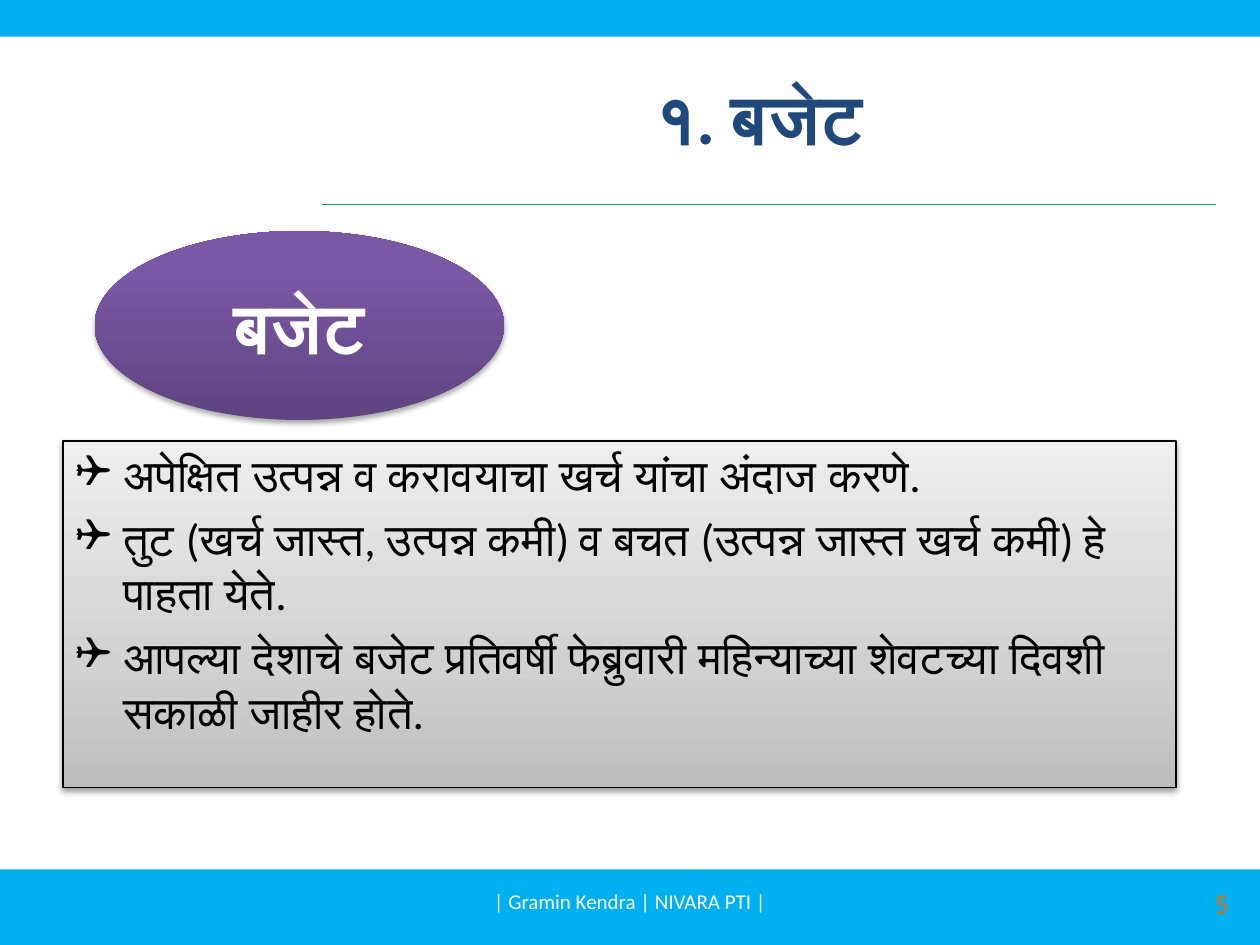
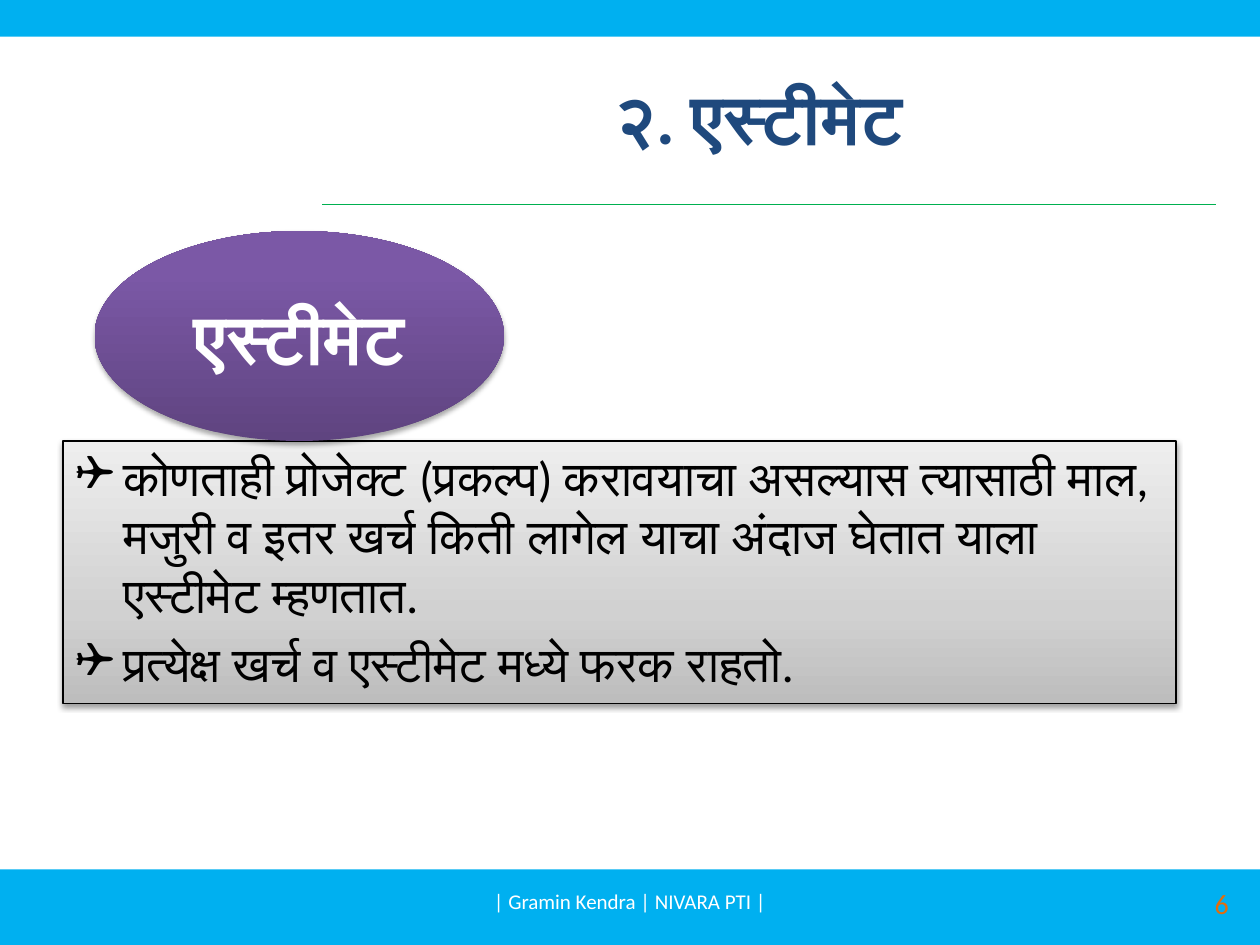
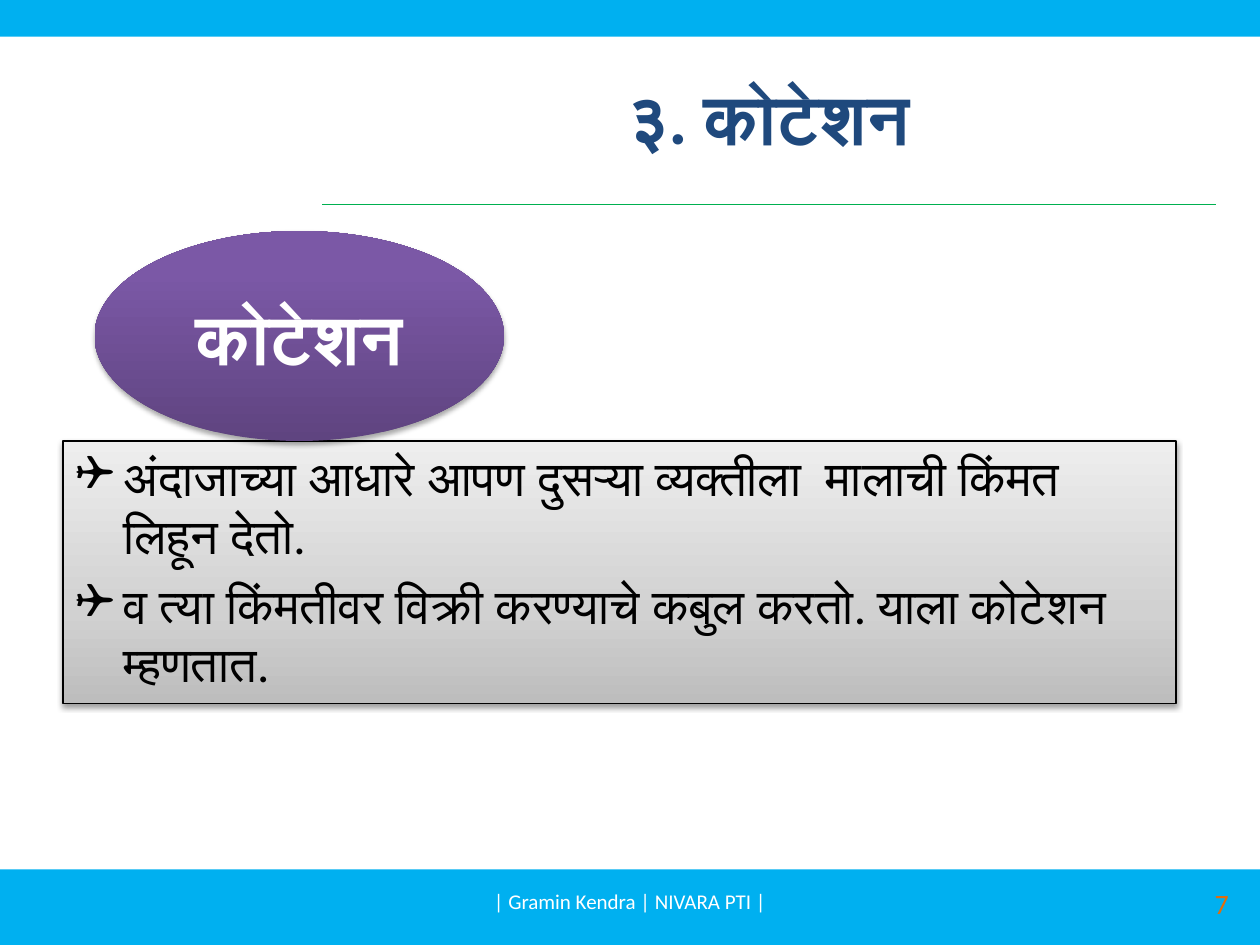
from lxml.etree import SubElement
from pptx import Presentation
from pptx.dml.color import RGBColor
from pptx.enum.shapes import MSO_CONNECTOR, MSO_SHAPE
from pptx.enum.text import MSO_ANCHOR, PP_ALIGN
from pptx.oxml.ns import qn
from pptx.util import Inches, Pt

FONT = "Calibri"
COLORS = {
    "band": "00B0F0", "rule": "00B050", "title": "1F497D", "white": "FFFFFF",
    "black": "000000", "number": "E46C0A",
}
# Gradient stops run from the bottom edge to the top
PANEL_STOPS = [(0, "BDBDBD"), (35, "D1D1D1"), (100, "EEEEEE")]
OVAL_STOPS = [(0, "5F4480"), (80, "7B58A6"), (100, "7C57A8")]

# The grid has 120 columns and 90 rows of square cells
COLS, ROWS = 120, 90
CELL = Inches(10) / COLS
TITLE_BOX = (30.7, 3.6, 85.1, 15)
RULE_ROW = 19.45
TOP_BAND = (0, 0, COLS, 3.5)
FOOTER = (0, 82.8, COLS, 7.2)
OVAL_LEFT, OVAL_TOP, OVAL_WIDTH = 9, 22, 39
PANEL_LEFT, PANEL_TOP, PANEL_WIDTH = 6, 42, 106

SLIDES = [
    dict(number=5, title="१. बजेट ", term="बजेट", oval_rows=18, panel_rows=33, size=25.9,
         points=["अपेक्षित उत्पन्न व करावयाचा खर्च यांचा अंदाज करणे.",
                 "तुट (खर्च जास्त, उत्पन्न कमी) व बचत (उत्पन्न जास्त खर्च कमी) हे पाहता येते.",
                 "आपल्या देशाचे बजेट प्रतिवर्षी फेब्रुवारी महिन्याच्या शेवटच्या दिवशी "
                 "सकाळी जाहीर होते."]),
    dict(number=6, title="२. एस्टीमेट ", term="एस्टीमेट", oval_rows=20, panel_rows=25, size=28,
         points=["कोणताही प्रोजेक्ट (प्रकल्प) करावयाचा असल्यास त्यासाठी माल, मजुरी व "
                 "इतर खर्च किती लागेल याचा अंदाज घेतात याला एस्टीमेट म्हणतात.",
                 "प्रत्येक्ष खर्च व एस्टीमेट मध्ये फरक राहतो."]),
    dict(number=7, title="३. कोटेशन", term="कोटेशन", oval_rows=20, panel_rows=25, size=28,
         points=["अंदाजाच्या आधारे आपण दुसऱ्या व्यक्तीला  मालाची किंमत लिहून देतो.",
                 "व त्या किंमतीवर विक्री करण्याचे कबुल करतो. याला कोटेशन म्हणतात."]),
]


def rgb(name):
    return RGBColor.from_string(COLORS[name])


def emu(*cells):
    return [round(c * CELL) for c in cells]


def add_text(tf, lines, size, color, bold=False, align=PP_ALIGN.CENTER,
             anchor=MSO_ANCHOR.MIDDLE, bullet=None):
    """Fill a text frame, one paragraph per line; return the last run."""
    tf.word_wrap = True
    tf.vertical_anchor = anchor
    for i, line in enumerate(lines):
        p = tf.paragraphs[0] if i == 0 else tf.add_paragraph()
        p.alignment = align
        if i:
            p.space_before = Pt(round(size * 0.21, 1))
        if bullet:
            pPr = p._p.get_or_add_pPr()
            pPr.set("marL", str(Inches(0.38)))
            pPr.set("indent", str(-Inches(0.38)))
            SubElement(pPr, qn("a:buFont"), typeface="Wingdings")
            SubElement(pPr, qn("a:buChar"), char=bullet)
        r = p.add_run()
        r.text = line
        r.font.name, r.font.size, r.font.bold = FONT, Pt(size), bold
        r.font.color.rgb = rgb(color)
    return r


def add_block(s, kind, box):
    sp = s.shapes.add_shape(kind, *emu(*box))
    sp.shadow.inherit = False
    sp.line.fill.background()
    return sp


def add_color(parent, value):
    return SubElement(parent, qn("a:srgbClr"), val=value)


def shade(sp, stops, opacity, distance):
    """Give a shape a bottom-to-top gradient and a soft shadow below it."""
    sp.fill.gradient()
    grad = sp._element.spPr.find(qn("a:gradFill"))
    for child in list(grad):
        grad.remove(child)
    gs_list = SubElement(grad, qn("a:gsLst"))
    for pos, value in stops:
        add_color(SubElement(gs_list, qn("a:gs"), pos=str(pos * 1000)), value)
    SubElement(grad, qn("a:lin"), ang="16200000", scaled="0")
    effects = sp._element.spPr.find(qn("a:effectLst"))
    shadow = SubElement(effects, qn("a:outerShdw"), blurRad=str(Pt(3.1)),
                        dist=str(Pt(distance)), dir="5400000", rotWithShape="0")
    SubElement(add_color(shadow, COLORS["black"]), qn("a:alpha"), val=str(opacity * 1000))


def add_band(s, box):
    sp = add_block(s, MSO_SHAPE.RECTANGLE, box)
    sp.fill.solid()
    sp.fill.fore_color.rgb = rgb("band")


def add_header(s, title, box):
    left, top, width, height = box
    add_band(s, TOP_BAND)
    # Rule under the title
    line = s.shapes.add_connector(MSO_CONNECTOR.STRAIGHT,
                                  *emu(left, RULE_ROW, left + width, RULE_ROW))
    line.line.color.rgb = rgb("rule")
    line.line.width = Pt(0.75)
    SubElement(line._element.spPr, qn("a:effectLst"))
    # Title
    sp = s.shapes.title
    sp.left, sp.top, sp.width, sp.height = emu(left, top, width, height)
    add_text(sp.text_frame, [title], 40, "title", bold=True)


def add_footer(s, number, box):
    left, top, width, height = box
    add_band(s, box)
    # Centred credit
    credit = s.shapes.add_textbox(*emu(left + 41, top + 0.6, 38, 4.8))
    add_text(credit.text_frame, ["| Gramin Kendra | NIVARA PTI |"], 12, "white")
    # Slide number field with outlined digits
    page = s.shapes.add_textbox(*emu(left + width - 29.8, top + 0.8, 28, 4.8))
    r = add_text(page.text_frame, [str(number)], 16, "number", align=PP_ALIGN.RIGHT)
    rPr = r._r.get_or_add_rPr()
    outline = SubElement(rPr, qn("a:ln"), w=str(Pt(1.45)))
    add_color(SubElement(outline, qn("a:solidFill")), COLORS["white"])
    rPr.insert(0, outline)
    field = r._r
    field.tag = qn("a:fld")
    field.set("id", "{B6F15528-21DE-4FAA-801E-634DDDAF4B2B}")
    field.set("type", "slidenum")


def add_panel(s, points, size, box):
    sp = add_block(s, MSO_SHAPE.RECTANGLE, box)
    shade(sp, PANEL_STOPS, opacity=38, distance=1.6)
    sp.line.color.rgb = rgb("black")
    sp.line.width = Pt(0.75)
    add_text(sp.text_frame, points, size, "black", align=PP_ALIGN.LEFT,
             anchor=MSO_ANCHOR.TOP, bullet="❑")


def add_term(s, term, box):
    sp = add_block(s, MSO_SHAPE.OVAL, box)
    shade(sp, OVAL_STOPS, opacity=35, distance=1.8)
    add_text(sp.text_frame, [term], 40, "white", bold=True)


def add_term_slide(prs, number, title, term, oval_rows, panel_rows, size, points):
    s = prs.slides.add_slide(prs.slide_layouts[5])
    add_header(s, title, TITLE_BOX)
    add_panel(s, points, size, (PANEL_LEFT, PANEL_TOP, PANEL_WIDTH, panel_rows))
    add_footer(s, number, FOOTER)
    add_term(s, term, (OVAL_LEFT, OVAL_TOP, OVAL_WIDTH, oval_rows))


def main():
    prs = Presentation()
    prs.slide_width, prs.slide_height = emu(COLS, ROWS)
    # Numbering continues from the first slide's number
    prs.element.set("firstSlideNum", str(SLIDES[0]["number"]))
    for content in SLIDES:
        add_term_slide(prs, **content)
    prs.save("out.pptx")


if __name__ == "__main__":
    main()
